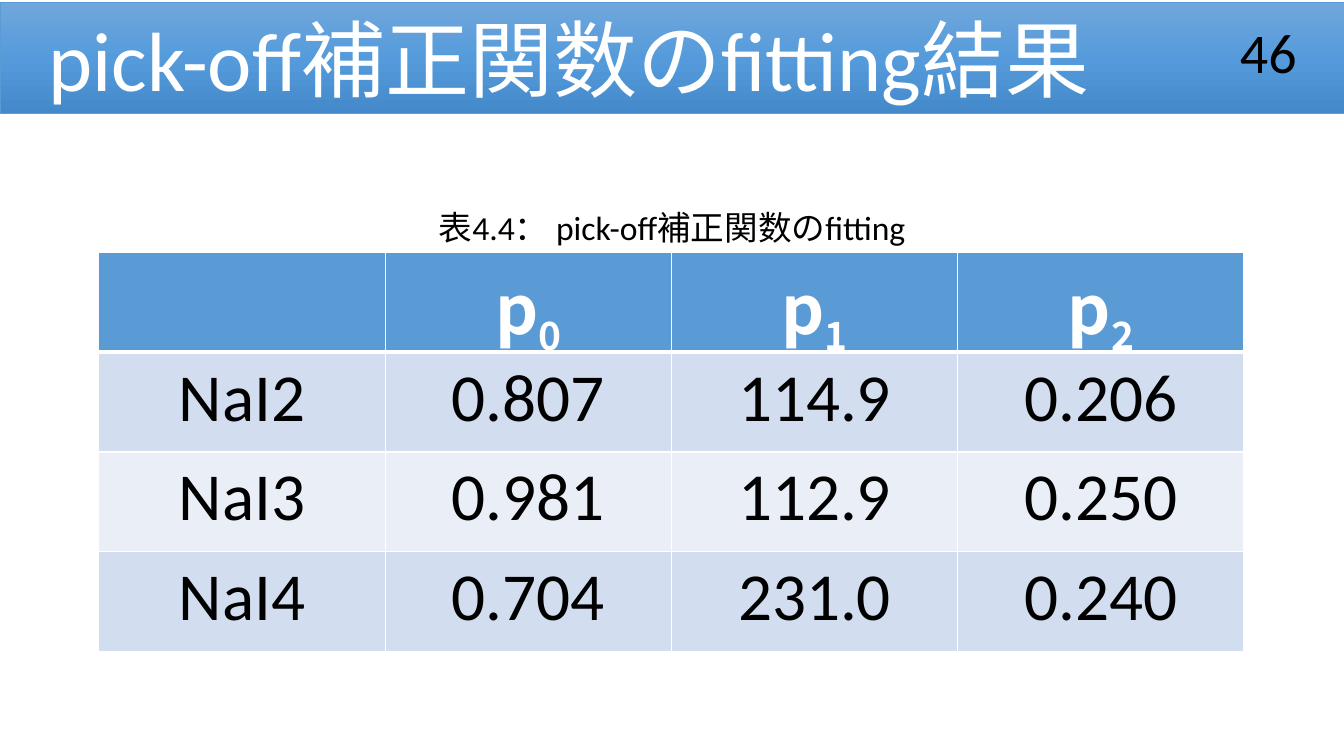
from lxml import etree
from pptx import Presentation
from pptx.dml.color import RGBColor
from pptx.enum.text import MSO_ANCHOR, MSO_AUTO_SIZE, PP_ALIGN
from pptx.oxml.ns import qn
from pptx.util import Inches, Pt

LEFT, CENTER, RIGHT = PP_ALIGN.LEFT, PP_ALIGN.CENTER, PP_ALIGN.RIGHT
TOP, MIDDLE = MSO_ANCHOR.TOP, MSO_ANCHOR.MIDDLE
NO_FIT = MSO_AUTO_SIZE.NONE

TITLE = "pick-off補正関数のfitting結果"
PAGE_NUMBER = "46"
CAPTION = "表4.4： pick-off補正関数のfitting"
PARAMETERS = [("p", "0"), ("p", "1"), ("p", "2")]
RESULTS = [
    ("NaI2", "0.807", "114.9", "0.206"),
    ("NaI3", "0.981", "112.9", "0.250"),
    ("NaI4", "0.704", "231.0", "0.240"),
]

COLORS = {
    "white": "FFFFFF",
    "black": "000000",
    "blue": "5B9BD5",
    "band_dark": "D2DEEF",
    "band_light": "EAEFF7",
}
TITLE_GRADIENT = [("0", "71A6DB"), ("50000", "559BDB"), ("100000", "448ACA")]
BODY_FONT, JAPANESE_FONT = "Calibri", "Noto Sans CJK JP"

TITLE_BOX = (0, 0.02, 13.33, 1.11)
NUMBER_BOX = (9.96, 0.31, 3, 0.4)
CAPTION_BOX = (3.96, 2, 5.41, 0.5)
TABLE_BOX = (0.98, 2.5, 11.36, 3.91)
HEADER_HEIGHT, ROW_HEIGHT = 0.94, 0.99
HEADER_SPACING = 0.85
HEADER_MARGINS, VALUE_MARGINS = (0.1, 0), (0.05, 0.05)

TITLE_FORMAT = {"size": Pt(60), "name": BODY_FONT, "color": "white"}
NUMBER_FORMAT = {"size": Pt(40), "name": BODY_FONT, "color": "black"}
CAPTION_FORMAT = {"size": Pt(24), "name": BODY_FONT, "color": "black"}
HEADER_FORMAT = {"size": Pt(48), "name": JAPANESE_FONT, "bold": True, "color": "white"}
VALUE_FORMAT = {"size": Pt(48), "name": BODY_FONT, "bold": False, "color": "black"}


def rgb(name):
    return RGBColor.from_string(COLORS[name])


def add_run(paragraph, text, formats):
    run = paragraph.add_run()
    run.text = text
    for attribute, value in formats.items():
        if attribute == "color":
            run.font.color.rgb = rgb(value)
        else:
            setattr(run.font, attribute, value)
    properties = run.font._element
    etree.SubElement(properties, qn("a:ea")).set("typeface", JAPANESE_FONT)
    return run


def write_text(shape, text, formats, alignment, anchor):
    frame = shape.text_frame
    settings = {"word_wrap": True, "auto_size": NO_FIT, "vertical_anchor": anchor}
    for attribute, value in settings.items():
        setattr(frame, attribute, value)
    paragraph = frame.paragraphs[0]
    paragraph.alignment = alignment
    add_run(paragraph, text, formats)


def add_label(slide, box, text, formats, alignment, anchor):
    label = slide.shapes.add_textbox(*map(Inches, box))
    write_text(label, text, formats, alignment, anchor)


def fill_gradient(shape, stops):
    shape.fill.gradient()
    shape.fill.gradient_angle = 270
    stop_list = shape._element.spPr.find(qn("a:gradFill")).find(qn("a:gsLst"))
    for old_stop in list(stop_list):
        stop_list.remove(old_stop)
    for position, color in stops:
        stop = etree.SubElement(stop_list, qn("a:gs"), pos=position)
        etree.SubElement(stop, qn("a:srgbClr"), val=color)


def add_title(slide):
    title = slide.shapes.title
    title.left, title.top, title.width, title.height = map(Inches, TITLE_BOX)
    fill_gradient(title, TITLE_GRADIENT)
    title.line.color.rgb = rgb("blue")
    title.line.width = Pt(0.5)
    title.text_frame.margin_left = Inches(0.48)
    write_text(title, TITLE, TITLE_FORMAT, LEFT, MIDDLE)


def prepare_cell(cell, color, margins):
    cell.fill.solid()
    cell.fill.fore_color.rgb = rgb(color)
    cell.margin_left = cell.margin_right = Inches(0.13)
    cell.margin_top, cell.margin_bottom = map(Inches, margins)
    paragraph = cell.text_frame.paragraphs[0]
    paragraph.alignment = CENTER
    return paragraph


def prepare_header_cell(cell):
    paragraph = prepare_cell(cell, "blue", HEADER_MARGINS)
    paragraph.line_spacing = HEADER_SPACING
    border = etree.Element(qn("a:lnB"), w=str(Pt(3)))
    border_fill = etree.SubElement(border, qn("a:solidFill"))
    etree.SubElement(border_fill, qn("a:srgbClr"), val=COLORS["white"])
    cell._tc.get_or_add_tcPr().insert(0, border)
    return paragraph


def add_results_table(slide):
    column_count = len(PARAMETERS) + 1
    frame = slide.shapes.add_table(len(RESULTS) + 1, column_count, *map(Inches, TABLE_BOX))
    table = frame.table
    for column in table.columns:
        column.width = Inches(TABLE_BOX[2] / column_count)
    for index, row in enumerate(table.rows):
        row.height = Inches(ROW_HEIGHT if index else HEADER_HEIGHT)

    prepare_header_cell(table.cell(0, 0))
    for column, (symbol, subscript) in enumerate(PARAMETERS, 1):
        paragraph = prepare_header_cell(table.cell(0, column))
        add_run(paragraph, symbol, HEADER_FORMAT)
        run = add_run(paragraph, subscript, HEADER_FORMAT)
        run.font._element.set("baseline", "-25000")

    for row, values in enumerate(RESULTS, 1):
        band = "band_dark" if row % 2 else "band_light"
        for column, value in enumerate(values):
            paragraph = prepare_cell(table.cell(row, column), band, VALUE_MARGINS)
            add_run(paragraph, value, VALUE_FORMAT)


def main():
    presentation = Presentation()
    presentation.slide_width = Inches(13.33)
    presentation.slide_height = Inches(7.5)
    slide = presentation.slides.add_slide(presentation.slide_layouts[5])
    add_title(slide)
    add_label(slide, NUMBER_BOX, PAGE_NUMBER, NUMBER_FORMAT, RIGHT, MIDDLE)
    add_label(slide, CAPTION_BOX, CAPTION, CAPTION_FORMAT, CENTER, TOP)
    add_results_table(slide)
    presentation.save("out.pptx")


if __name__ == "__main__":
    main()
